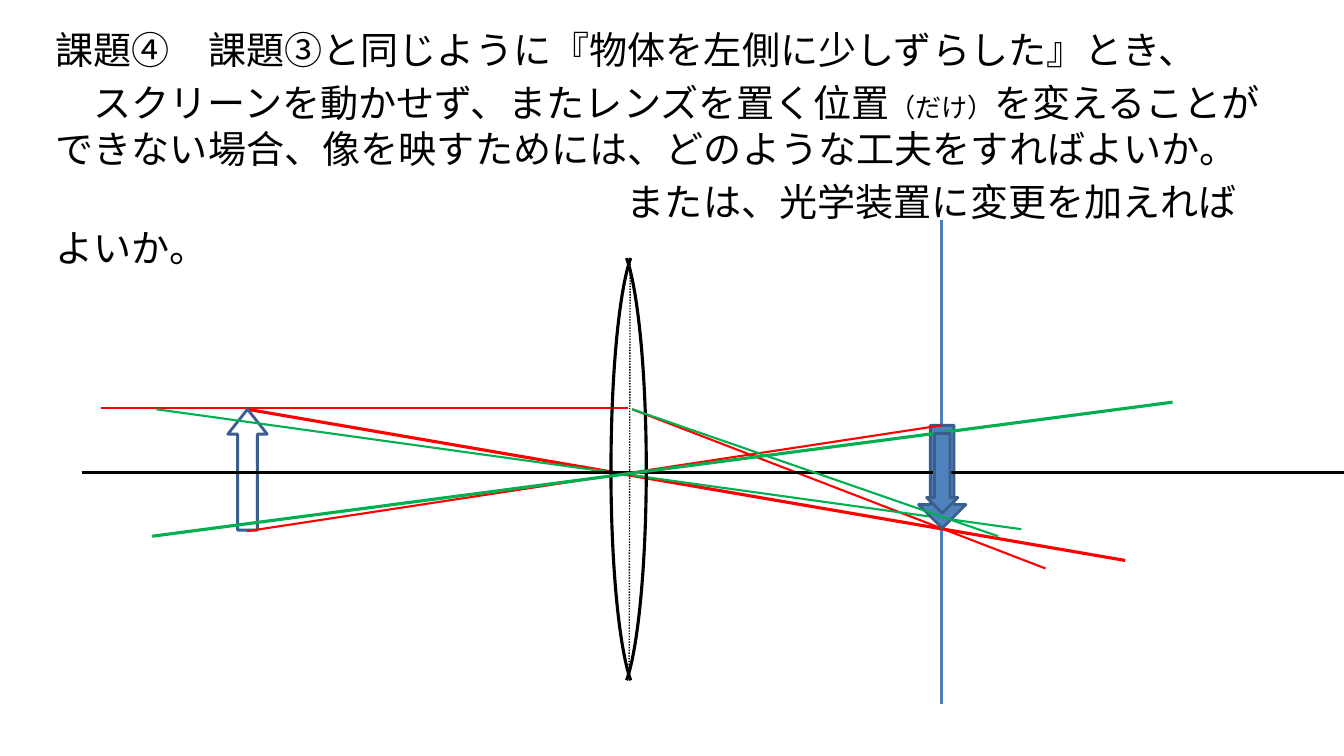
from dataclasses import dataclass
from typing import NamedTuple, Optional

from lxml.etree import SubElement
from pptx import Presentation
from pptx.dml.color import RGBColor
from pptx.enum.dml import MSO_LINE
from pptx.enum.shapes import MSO_CONNECTOR, MSO_SHAPE
from pptx.enum.text import MSO_ANCHOR, MSO_AUTO_SIZE
from pptx.oxml.ns import qn
from pptx.shapes.base import BaseShape
from pptx.slide import Slide
from pptx.util import Emu, Pt

EMU_PER_PX = 9144  # 100 px to the inch


def px(length: int) -> Emu:
    return Emu(length * EMU_PER_PX)


@dataclass(frozen=True)
class Theme:
    font: str = "Calibri"
    black: str = "000000"
    red: str = "FF0000"
    green: str = "00B050"
    screen: str = "4B7EBC"
    arrow_fill: str = "4F81BD"
    arrow_edge: str = "3A5F8C"
    text_size: float = 27.2
    small_size: float = 18.7
    paragraph_gap: float = 5.5
    thin: float = 1.5
    thick: float = 2.25
    edge: float = 2
    dotted: float = 1


THEME = Theme()


class Line(NamedTuple):
    x1: int
    y1: int
    x2: int
    y2: int
    color: str
    width: float = THEME.thin
    dash: Optional[MSO_LINE] = None


class Arrow(NamedTuple):
    left: int
    top: int
    width: int
    height: int
    fill: Optional[str] = None
    rotation: int = 0
    head: float = 0.5


class Paragraph(NamedTuple):
    spans: tuple[tuple[str, float], ...]
    indent_chars: int = 0


class Quarter(NamedTuple):
    """A quarter of a lens outline: left edge of its ellipse, start and end in degrees."""
    left: int
    start: int
    end: int


QUESTION = (
    Paragraph((("課題④　課題③と同じように『物体を左側に少しずらした』とき、", THEME.text_size),)),
    Paragraph((
        ("スクリーンを動かせず、またレンズを置く位置", THEME.text_size),
        ("（だけ）", THEME.small_size),
        ("を変えることができない場合、像を映すためには、どのような工夫をすればよいか。", THEME.text_size),
    ), indent_chars=1),
    Paragraph((("または、光学装置に変更を加えればよいか。", THEME.text_size),), indent_chars=15),
)

SCREEN = Line(934, 218, 934, 698, THEME.screen, THEME.thick)
RED_RAYS = (
    Line(100, 405, 623, 405, THEME.red),
    Line(627, 406, 1037, 564, THEME.red),
    Line(245, 406, 1116, 556, THEME.red, THEME.thick),
)
GREEN_RAY = Line(155, 406, 1013, 525, THEME.green)
AXIS_AND_CROSSING_RAYS = (
    Line(81, 469, 1333, 469, THEME.black, THEME.thick),
    Line(625, 256, 624, 674, THEME.black, THEME.dotted, MSO_LINE.ROUND_DOT),
    Line(245, 527, 934, 422, THEME.red),
    Line(151, 532, 1163, 399, THEME.green, THEME.thick),
    Line(627, 406, 990, 532, THEME.green),
)

OBJECT_ARROW = Arrow(226, 406, 39, 120, head=0.634)
IMAGE_ARROW = Arrow(911, 422, 47, 102, THEME.arrow_fill, 180)
SMALL_IMAGE_ARROW = Arrow(919, 430, 31, 79, THEME.arrow_fill, 180)

LENS_TOP, LENS_WIDTH, LENS_HEIGHT = 241, 61, 449
LENS = (
    Quarter(580, 273, 0),
    Quarter(606, 180, 267),
    Quarter(606, 93, 180),
    Quarter(580, 0, 87),
)


def write_question(page: Slide) -> None:
    box = page.placeholders[1]
    box.left, box.top, box.width, box.height = px(45), px(21), px(1221), px(220)
    frame = box.text_frame
    frame.word_wrap = True
    frame.auto_size = MSO_AUTO_SIZE.NONE
    frame.vertical_anchor = MSO_ANCHOR.TOP
    for number, content in enumerate(QUESTION):
        para = frame.add_paragraph() if number else frame.paragraphs[0]
        para.line_spacing = 1.0
        para.space_before = Pt(THEME.paragraph_gap)
        properties = para._p.get_or_add_pPr()
        properties.set("marL", "0")
        properties.set("indent", str(Pt(content.indent_chars * THEME.text_size)))
        SubElement(properties, qn("a:buNone"))
        for text, size in content.spans:
            span = para.add_run()
            span.text = text
            span.font.name = THEME.font
            span.font.size = Pt(size)
            span.font.color.rgb = RGBColor.from_string(THEME.black)


def draw_line(page: Slide, line: Line) -> None:
    connector = page.shapes.add_connector(
        MSO_CONNECTOR.STRAIGHT, px(line.x1), px(line.y1), px(line.x2), px(line.y2))
    connector.line.color.rgb = RGBColor.from_string(line.color)
    connector.line.width = Pt(line.width)
    if line.dash is not None:
        connector.line.dash_style = line.dash
    SubElement(connector._element.spPr, qn("a:effectLst"))


def style_shape(shape: BaseShape, fill: Optional[str], color: str, width: float) -> None:
    shape.shadow.inherit = False
    if fill is None:
        shape.fill.background()
    else:
        shape.fill.solid()
        shape.fill.fore_color.rgb = RGBColor.from_string(fill)
    shape.line.color.rgb = RGBColor.from_string(color)
    shape.line.width = Pt(width)


def draw_arrow(page: Slide, arrow: Arrow) -> None:
    shape = page.shapes.add_shape(
        MSO_SHAPE.UP_ARROW, px(arrow.left), px(arrow.top), px(arrow.width), px(arrow.height))
    shape.adjustments[1] = arrow.head
    shape.rotation = arrow.rotation
    style_shape(shape, arrow.fill, THEME.arrow_edge, THEME.edge)


def draw_lens(page: Slide) -> None:
    for quarter in LENS:
        arc = page.shapes.add_shape(
            MSO_SHAPE.ARC, px(quarter.left), px(LENS_TOP), px(LENS_WIDTH), px(LENS_HEIGHT))
        # Angles are stored in 60000ths of a degree, adjustments in 100000ths.
        arc.adjustments[0] = quarter.start * 0.6
        arc.adjustments[1] = quarter.end * 0.6
        style_shape(arc, None, THEME.black, THEME.thick)


def main() -> None:
    deck = Presentation()
    deck.slide_width, deck.slide_height = px(1333), px(750)
    page = deck.slides.add_slide(deck.slide_layouts[1])
    title = page.shapes.title._element
    title.getparent().remove(title)

    write_question(page)
    draw_line(page, SCREEN)
    for ray in RED_RAYS:
        draw_line(page, ray)
    draw_arrow(page, OBJECT_ARROW)
    draw_line(page, GREEN_RAY)
    draw_arrow(page, IMAGE_ARROW)
    draw_lens(page)
    for line in AXIS_AND_CROSSING_RAYS:
        draw_line(page, line)
    draw_arrow(page, SMALL_IMAGE_ARROW)
    deck.save("out.pptx")


if __name__ == "__main__":
    main()
